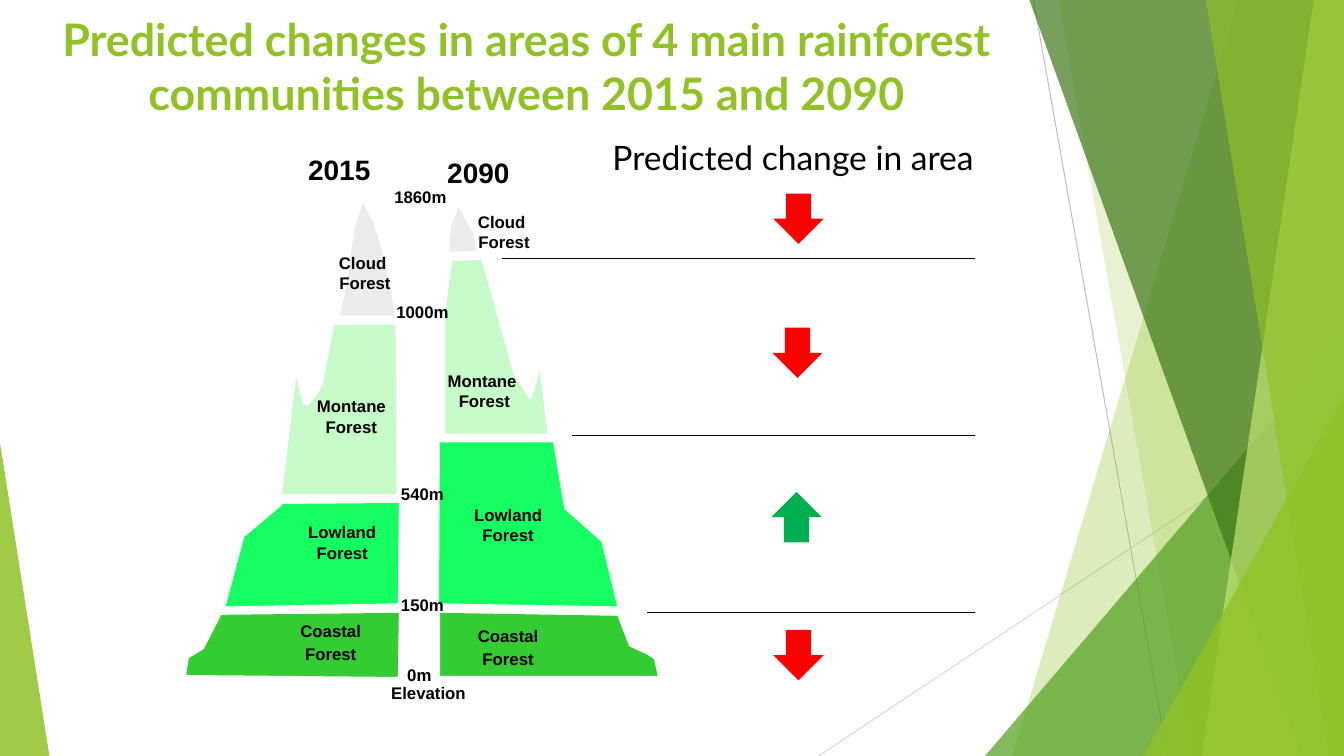
from collections import namedtuple

from lxml.etree import SubElement
from pptx import Presentation
from pptx.dml.color import RGBColor
from pptx.enum.shapes import MSO_CONNECTOR as Connector, MSO_SHAPE as Preset
from pptx.enum.text import MSO_ANCHOR as Anchor, MSO_AUTO_SIZE as AutoSize, PP_ALIGN as Align
from pptx.oxml.ns import qn
from pptx.util import Inches, Pt

BLACK = RGBColor(0x00, 0x00, 0x00)
WHITE = RGBColor(0xFF, 0xFF, 0xFF)
RED = RGBColor(0xFF, 0x00, 0x00)
GREEN = RGBColor(0x00, 0xB0, 0x50)
LIME = RGBColor(0x90, 0xC2, 0x26)
LEAF = RGBColor(0x54, 0xA0, 0x21)
DARK_LEAF = RGBColor(0x3F, 0x78, 0x19)
PALE_LIME = RGBColor(0xC0, 0xE4, 0x74)
GRAY = RGBColor(0xBF, 0xBF, 0xBF)
LIGHT_GRAY = RGBColor(0xD9, 0xD9, 0xD9)
CLOUD = RGBColor(0xEB, 0xEB, 0xEB)
MONTANE = RGBColor(0xC6, 0xFA, 0xC8)
LOWLAND = RGBColor(0x15, 0xFF, 0x63)
COASTAL = RGBColor(0x33, 0xCC, 0x33)

Box = namedtuple("Box", "left top width height")
Band = namedtuple("Band", "name color outline label points")

MOUNTAIN_2015 = [
    Band("Cloud \nForest", CLOUD, 2, Box(1.38, 1.06, 0.88, 0.58),
         [(1.56, 1.73), (1.63, 1.38), (1.71, 0.82), (1.8, 0.58),
          (1.91, 0.79), (2.02, 1.14), (2.1, 1.52), (2.13, 1.73)]),
    Band("Montane \nForest", MONTANE, 2.5, Box(1.24, 2.44, 0.89, 0.58),
         [(1.5, 1.82), (1.38, 2.43), (1.25, 2.61), (1.22, 2.59),
          (1.13, 2.25), (0.98, 3.52), (2.15, 3.52), (2.14, 1.82)]),
    Band("Lowland\nForest", LOWLAND, 2, Box(1.11, 3.69, 0.97, 0.58),
         [(0.99, 3.6), (0.61, 3.92), (0.42, 4.63), (2.16, 4.6), (2.17, 3.59)]),
    Band("Coastal Forest", COASTAL, 2, Box(0.89, 4.68, 1.18, 0.55),
         [(0.38, 4.7), (0.21, 5.03), (0.06, 5.12), (0.03, 5.31),
          (2.16, 5.33), (2.17, 4.68)]),
]
MOUNTAIN_2090 = [
    Band("Cloud \nForest", CLOUD, 2, Box(0.27, 0.65, 0.86, 0.58),
         [(0.14, 1.1), (0.16, 0.84), (0.25, 0.62), (0.41, 0.92), (0.44, 1.09)]),
    Band("Montane \nForest", MONTANE, 2.5, Box(0.02, 2.19, 0.97, 0.58),
         [(0.49, 1.18), (0.6, 1.55), (0.81, 2.31), (0.96, 2.54), (1.06, 2.19),
          (1.15, 2.92), (0.1, 2.92), (0.1, 1.69), (0.17, 1.19)]),
    Band("Lowland\nForest", LOWLAND, 2, Box(0.28, 3.52, 0.92, 0.58),
         [(1.2, 2.99), (1.31, 3.64), (1.68, 3.97), (1.84, 4.63),
          (0.04, 4.6), (0.05, 2.99)]),
    Band("Coastal Forest", COASTAL, 2, Box(0.15, 4.73, 1.18, 0.55),
         [(1.84, 4.71), (1.95, 5), (2.12, 5.08), (2.2, 5.13),
          (2.24, 5.32), (0.05, 5.32), (0.05, 4.68)]),
]


def within(region, box):
    return Box(region.left + box.left, region.top + box.top, box.width, box.height)


def write(frame, text, size=12, font="Arial", color=BLACK, bold=True,
          anchor=Anchor.TOP, line_spacing=None, before=None, after=None):
    frame.word_wrap = True
    frame.auto_size = AutoSize.NONE
    frame.vertical_anchor = anchor
    frame.text = text
    for paragraph in frame.paragraphs:
        paragraph.alignment = Align.CENTER
        paragraph.line_spacing = line_spacing
        paragraph.space_before = before
        paragraph.space_after = after
        run_font = paragraph.runs[0].font
        run_font.name, run_font.size, run_font.bold = font, Pt(size), bold
        run_font.color.rgb = color


def add_text(slide, box, text, **formatting):
    text_box = slide.shapes.add_textbox(*map(Inches, box))
    write(text_box.text_frame, text, **formatting)


def paint(shape, color, opacity=100, outline=None):
    shape.shadow.inherit = False
    shape.fill.solid()
    shape.fill.fore_color.rgb = color
    if opacity < 100:
        color_element = shape._element.spPr.find(qn("a:solidFill"))[0]
        SubElement(color_element, qn("a:alpha"), val=str(opacity * 1000))
    if outline:
        shape.line.color.rgb = WHITE
        shape.line.width = Pt(outline)
    else:
        shape.line.fill.background()


def add_preset(slide, preset, box, color, opacity=100):
    shape = slide.shapes.add_shape(preset, *map(Inches, box))
    paint(shape, color, opacity)
    return shape


def add_outline(slide, region, points, color, close=True, **look):
    corners = [(Inches(region.left + x), Inches(region.top + y)) for x, y in points]
    builder = slide.shapes.build_freeform(*corners[0])
    builder.add_line_segments(corners[1:], close=close)
    paint(builder.convert_to_shape(), color, **look)


def add_line(slide, region, start, end, color):
    ends = [Inches(offset + value) for point in (start, end)
            for offset, value in zip(region, point)]
    connector = slide.shapes.add_connector(Connector.STRAIGHT, *ends)
    connector.line.color.rgb = color
    connector.line.width = Pt(0.75)
    SubElement(connector._element.spPr, qn("a:effectLst"))


def add_backdrop(slide, region):
    width, height = region.width, region.height

    def add_ray(top_left, top_right, bottom_right, bottom_left, color, opacity):
        points = [(top_left, 0), (top_right, 0), (bottom_right, height), (bottom_left, height)]
        add_outline(slide, region, points, color, opacity=opacity)

    def add_corner(left, top, corner_width, slant, color, opacity):
        box = within(region, Box(left, top, corner_width, height - top))
        add_preset(slide, Preset.ISOSCELES_TRIANGLE, box, color, opacity).adjustments[0] = slant

    add_line(slide, region, (10.25, 0), (11.58, height), GRAY)
    add_line(slide, region, (width, 4.03), (8.12, height), LIGHT_GRAY)
    add_ray(12.28, width, width, 10.04, LIME, 30)
    add_ray(10.5, width, width, 11.82, LIME, 20)
    add_corner(9.77, 3.33, 3.56, 1.0, LEAF, 72)
    add_ray(10.21, width, width, 12.91, DARK_LEAF, 70)
    add_ray(13.03, width, width, 11.92, PALE_LIME, 70)
    add_ray(11.96, width, width, 13.18, LIME, 65)
    add_corner(11.34, 3.93, 1.99, 1.0, LIME, 80)
    add_corner(0, 4.39, 0.49, 0.0, LIME, 85)


def add_title(slide, region):
    title = slide.shapes.title
    title.left, title.top, title.width, title.height = map(Inches, region)
    write(title.text_frame,
          "Predicted changes in areas of 4 main rainforest communities between 2015 and 2090",
          size=32, font="Lato", color=LIME, before=Pt(10), line_spacing=1.0)
    title.text_frame.paragraphs[0]._p.get_or_add_pPr().set("marL", str(Inches(0.12)))


def add_mountain(slide, region, year, year_box, bands):
    for band in bands:
        add_outline(slide, region, band.points, band.color, close=False, outline=band.outline)
    for band in bands:
        spacing = {"line_spacing": 1.15, "after": Pt(10)} if band.color == COASTAL else {}
        middle = band.color in (MONTANE, LOWLAND)
        add_text(slide, within(region, band.label), band.name,
                 anchor=Anchor.MIDDLE if middle else Anchor.TOP, **spacing)
    add_text(slide, within(region, year_box), year, size=20)


def add_elevations(slide, region):
    for text, center, top in [("1860m", 0.47, 0.4), ("1000m", 0.49, 1.54), ("540m", 0.49, 3.35),
                              ("150m", 0.49, 4.45), ("0m", 0.46, 5.15), ("Elevation", 0.55, 5.32)]:
        add_text(slide, within(region, Box(center - 0.5, top, 1, 0.35)), text)


def add_changes(slide, region):
    add_text(slide, within(region, Box(0, 0, region.width, 0.51)),
             "Predicted change in area", size=24, font="Lato", bold=False)
    for left, top, color in [(2.2, 0.61, RED), (2.19, 1.94, RED),
                             (2.18, 3.57, GREEN), (2.2, 4.94, RED)]:
        arrow = Preset.UP_ARROW if color == GREEN else Preset.DOWN_ARROW
        add_preset(slide, arrow, within(region, Box(left, top, 0.5, 0.5)), color)
    for left, top in [(-0.49, 1.25), (0.2, 3.01), (0.95, 4.77)]:
        add_line(slide, region, (left, top), (4.2, top), BLACK)


def main():
    presentation = Presentation()
    presentation.slide_width, presentation.slide_height = Inches(13.33), Inches(7.5)
    slide = presentation.slides.add_slide(presentation.slide_layouts[5])
    add_backdrop(slide, Box(0, 0, 13.33, 7.5))
    add_title(slide, Box(-0.18, 0.07, 10.69, 1.28))
    add_mountain(slide, Box(1.8, 1.4, 2.2, 5.4), "2015", Box(0.76, 0.06, 1.61, 0.44), MOUNTAIN_2015)
    add_mountain(slide, Box(4.3, 1.4, 2.3, 5.4), "2090", Box(-0.36, 0.09, 1.61, 0.44), MOUNTAIN_2090)
    add_elevations(slide, Box(3.7, 1.4, 1.1, 5.7))
    add_changes(slide, Box(5.47, 1.31, 4.79, 5.5))
    presentation.save("out.pptx")


if __name__ == "__main__":
    main()
